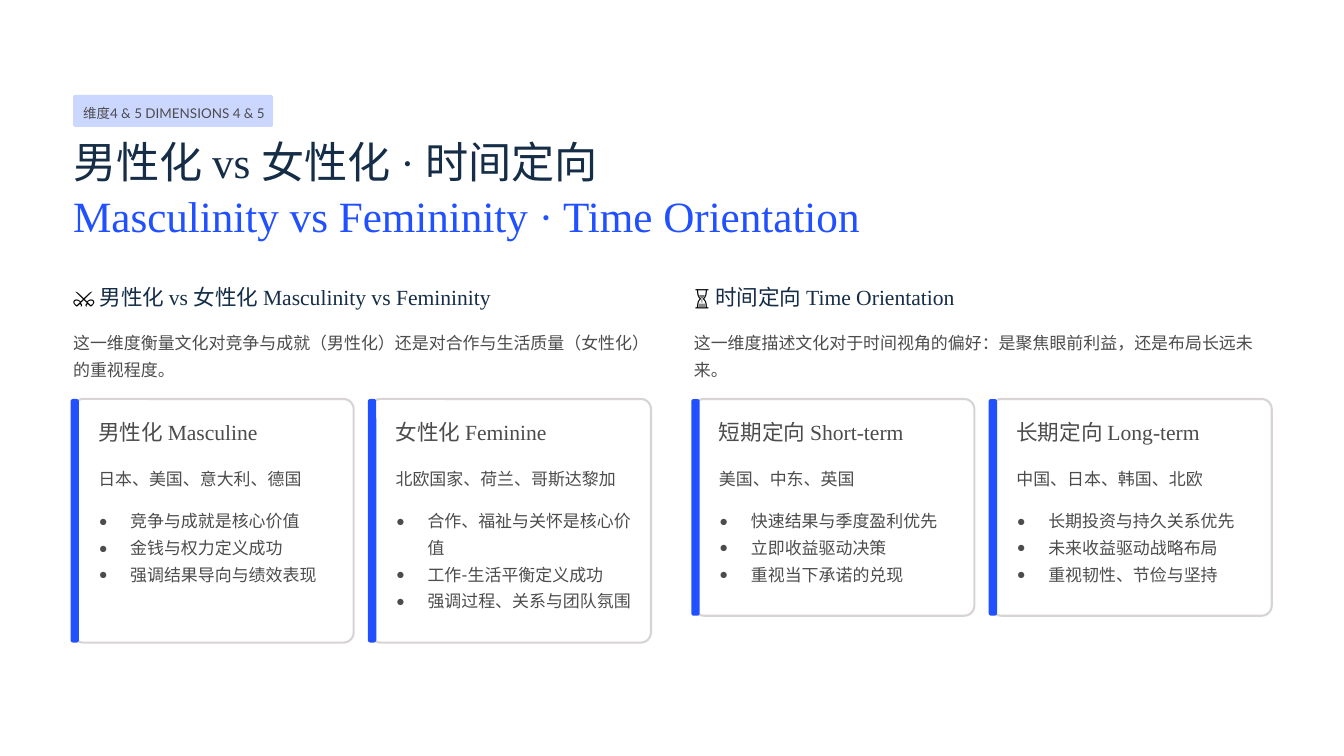
from lxml import etree
from pptx import Presentation
from pptx.dml.color import RGBColor
from pptx.enum.shapes import MSO_SHAPE as Preset
from pptx.oxml.ns import qn
from pptx.util import Inches, Pt

WHITE = RGBColor(0xFF, 0xFF, 0xFF)
BLACK = RGBColor(0x00, 0x00, 0x00)
BLUE = RGBColor(0x21, 0x50, 0xFE)
PALE_BLUE = RGBColor(0xCC, 0xD7, 0xFF)
NAVY = RGBColor(0x15, 0x2D, 0x47)
TEXT_GRAY = RGBColor(0x4C, 0x4C, 0x4D)
BORDER_GRAY = RGBColor(0xD8, 0xD4, 0xD4)

SERIF = "Times New Roman"
SANS = "Lato"

MARGIN = 0.87
COLUMN_PITCH = 7.39
COLUMN_WIDTH = 6.88
CARD_WIDTH = 3.34
CARD_PITCH = 3.54
CARD_TOP = 4.75

COLUMNS = [
    {
        "icon": "⚔️",
        "heading": " 男性化 vs 女性化 Masculinity vs Femininity",
        "intro": "这一维度衡量文化对竞争与成就（男性化）还是对合作与生活质量（女性化）的重视程度。",
        "card_height": 2.9,
        "cards": [
            ("男性化 Masculine", "日本、美国、意大利、德国",
             ["竞争与成就是核心价值", "金钱与权力定义成功", "强调结果导向与绩效表现"]),
            ("女性化 Feminine", "北欧国家、荷兰、哥斯达黎加",
             ["合作、福祉与关怀是核心价值", "工作-生活平衡定义成功", "强调过程、关系与团队氛围"]),
        ],
    },
    {
        "icon": "⏳",
        "heading": " 时间定向 Time Orientation",
        "intro": "这一维度描述文化对于时间视角的偏好：是聚焦眼前利益，还是布局长远未来。",
        "card_height": 2.58,
        "cards": [
            ("短期定向 Short-term", "美国、中东、英国",
             ["快速结果与季度盈利优先", "立即收益驱动决策", "重视当下承诺的兑现"]),
            ("长期定向 Long-term", "中国、日本、韩国、北欧",
             ["长期投资与持久关系优先", "未来收益驱动战略布局", "重视韧性、节俭与坚持"]),
        ],
    },
]


def add_rounded(slide, left, top, width, height, radius, fill, border=None):
    shape = slide.shapes.add_shape(
        Preset.ROUNDED_RECTANGLE,
        Inches(left), Inches(top), Inches(width), Inches(height))
    shape.adjustments[0] = radius / min(width, height)
    shape.shadow.inherit = False
    shape.fill.solid()
    shape.fill.fore_color.rgb = fill
    if border is None:
        shape.line.fill.background()
    else:
        shape.line.color.rgb = border
        shape.line.width = Pt(1.8)


def style_run(run, font, size, color):
    run.font.name = font
    run.font.size = Pt(size)
    run.font.color.rgb = color


def add_bullet(paragraph):
    properties = paragraph._p.get_or_add_pPr()
    indent = Inches(0.38)
    properties.set("marL", str(indent))
    properties.set("indent", str(-indent))
    etree.SubElement(properties, qn("a:buFont")).set("typeface", SANS)
    etree.SubElement(properties, qn("a:buChar")).set("char", "•")


def add_text(slide, left, top, width, height, lines, font, size,
             color=TEXT_GRAY, spacing=23, bullets=False):
    """Add a text box without insets and return its paragraphs."""
    box = slide.shapes.add_textbox(
        Inches(left), Inches(top), Inches(width), Inches(height))
    frame = box.text_frame
    frame.margin_left = frame.margin_right = 0
    frame.margin_top = frame.margin_bottom = 0
    frame.word_wrap = True
    frame.text = "\n".join(lines)
    for paragraph in frame.paragraphs:
        paragraph._p.get_or_add_pPr().set("hangingPunct", "0")
        if bullets:
            add_bullet(paragraph)
        paragraph.line_spacing = Pt(spacing)
        for run in paragraph.runs:
            style_run(run, font, size, color)
    return frame.paragraphs


def add_header(slide, left, top):
    add_rounded(slide, left, top, 2.38, 0.38, 0.025, PALE_BLUE)
    add_text(slide, left + 0.12, top + 0.06, 2.26, 0.26,
             ["维度4 & 5 DIMENSIONS 4 & 5"], SANS, 11.5, spacing=18.5)
    title = add_text(slide, left, top + 0.46, 9.59, 1.29,
                     ["男性化 vs 女性化 · 时间定向",
                      "Masculinity vs Femininity · Time Orientation"],
                     SERIF, 37, NAVY, spacing=46)
    title[1].runs[0].font.color.rgb = BLUE


def add_card(slide, left, top, height, heading, countries, points):
    add_rounded(slide, left, top, CARD_WIDTH, height, 0.12, WHITE, BORDER_GRAY)
    add_rounded(slide, left - 0.03, top, 0.1, height, 0.03, BLUE)
    text_left = left + 0.3
    add_text(slide, text_left, top + 0.23, 2.8, 0.32, [heading], SERIF, 18.5)
    add_text(slide, text_left, top + 0.75, 2.8, 0.32, [countries], SANS, 14.5)
    add_text(slide, text_left, top + 1.25, 2.8, height - 1.48, points,
             SANS, 14.5, bullets=True)


def add_column(slide, left, column):
    heading = add_text(slide, left, 3.37, COLUMN_WIDTH, 0.32,
                       [column["icon"]], SERIF, 18.5, BLACK)
    run = heading[0].add_run()
    run.text = column["heading"]
    style_run(run, SERIF, 18.5, NAVY)
    add_text(slide, left, 3.88, COLUMN_WIDTH, 0.64, [column["intro"]],
             SANS, 14.5)
    for index, card in enumerate(column["cards"]):
        add_card(slide, left + index * CARD_PITCH, CARD_TOP,
                 column["card_height"], *card)


def main():
    presentation = Presentation()
    presentation.slide_width = Inches(16)
    presentation.slide_height = Inches(9)
    slide = presentation.slides.add_slide(presentation.slide_layouts[6])
    slide.background.fill.solid()
    slide.background.fill.fore_color.rgb = WHITE
    add_header(slide, MARGIN, 1.13)
    for index, column in enumerate(COLUMNS):
        add_column(slide, MARGIN + index * COLUMN_PITCH, column)
    presentation.save("out.pptx")


if __name__ == "__main__":
    main()
